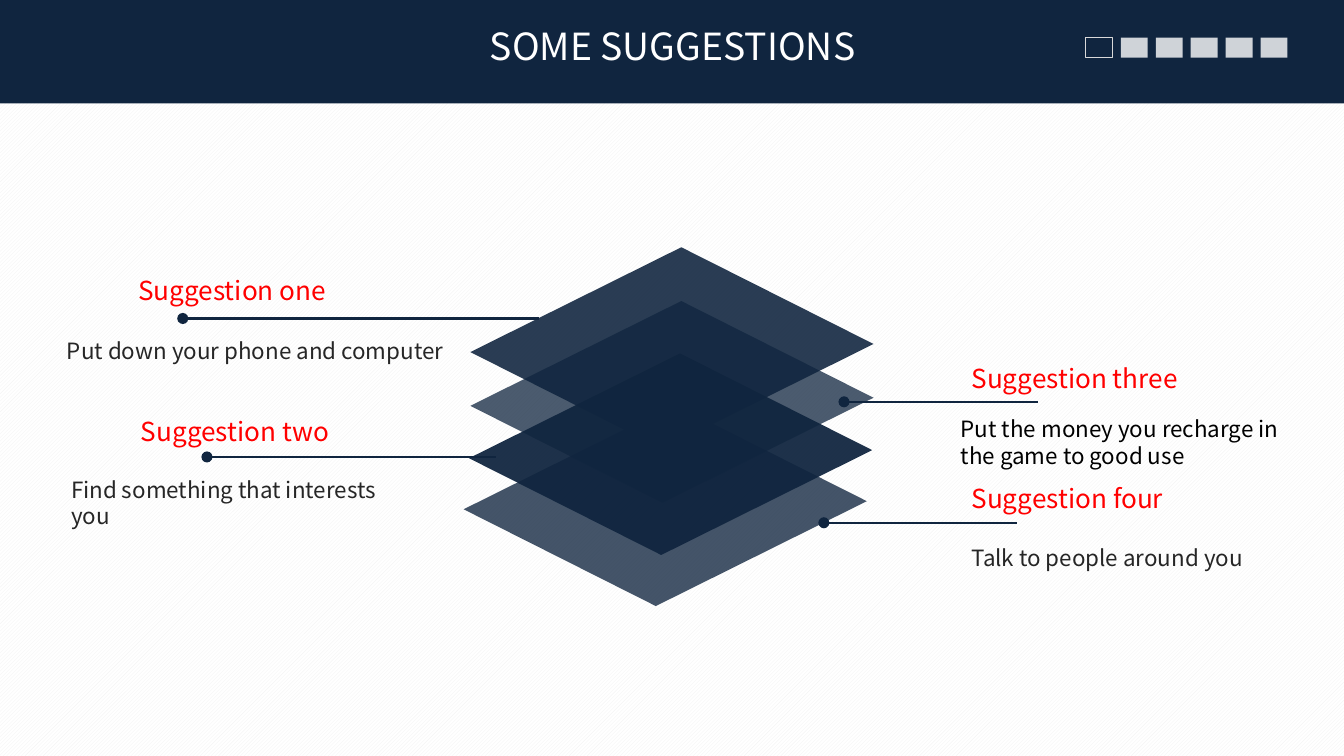
from lxml import etree
from pptx import Presentation
from pptx.dml.color import RGBColor
from pptx.enum.dml import MSO_PATTERN as Pattern
from pptx.enum.shapes import MSO_CONNECTOR as Link, MSO_SHAPE as Shape
from pptx.enum.text import PP_ALIGN as Align
from pptx.oxml.ns import qn
from pptx.util import Inches, Pt

FONT = "Noto Sans CJK SC"
NAVY, WHITE, RED, DARK = "10253F", "FFFFFF", "FF0000", "262626"


def color(text):
    return RGBColor.from_string(text)


class Deck:
    def __init__(self, width, height):
        self.prs = Presentation()
        self.prs.slide_width = Inches(width)
        self.prs.slide_height = Inches(height)
        self.slide = self.prs.slides.add_slide(self.prs.slide_layouts[6])
        self.shapes = self.slide.shapes

    def back(self, fore, ground):
        fill = self.slide.background.fill
        fill.patterned()
        fill.pattern = Pattern.LIGHT_UPWARD_DIAGONAL
        fill.fore_color.rgb = color(fore)
        fill.back_color.rgb = color(ground)

    def paint(self, shape, fill, alpha):
        """Give a flat fill; alpha is the opacity in percent."""
        shape.shadow.inherit = False
        shape.line.fill.background()
        if fill is None:
            shape.fill.background()
            return
        shape.fill.solid()
        shape.fill.fore_color.rgb = color(fill)
        if alpha < 100:
            tone = shape.fill._xPr.find(".//" + qn("a:srgbClr"))
            etree.SubElement(tone, qn("a:alpha"), val=str(alpha * 1000))

    def rect(self, x, y, w, h, fill=None, alpha=100, line=None):
        box = self.shapes.add_shape(
            Shape.RECTANGLE, Inches(x), Inches(y), Inches(w), Inches(h))
        self.paint(box, fill, alpha)
        if line:
            box.line.color.rgb = color(line)
            box.line.width = Pt(0.5)

    def layer(self, x, y, alpha):
        """Draw one tilted sheet centred on x, y."""
        half = [(0.07, -0.75), (1.5, -0.03)]
        spots = half + [(-dx, -dy) for dx, dy in half]
        points = [(Inches(x + dx), Inches(y + dy)) for dx, dy in spots]
        sheet = self.shapes.build_freeform(*points[0])
        sheet.add_line_segments(points[1:], close=True)
        self.paint(sheet.convert_to_shape(), NAVY, alpha)

    def text(self, x, y, w, h, words, size, tint, align=Align.LEFT):
        frame = self.shapes.add_textbox(
            Inches(x), Inches(y), Inches(w), Inches(h)).text_frame
        frame.word_wrap = True
        frame.text = words
        para = frame.paragraphs[0]
        para.alignment = align
        font = para.runs[0].font
        font.size = Pt(size)
        font.color.rgb = color(tint)
        font.name = FONT
        etree.SubElement(font._element, qn("a:ea"), typeface=FONT)

    def pin(self, x, y, end):
        """Draw a level line with a dot at its start."""
        line = self.shapes.add_connector(
            Link.STRAIGHT, Inches(x), Inches(y), Inches(end), Inches(y))
        line.line.color.rgb = color(NAVY)
        line.line.width = Pt(1.25)
        etree.SubElement(line.line._get_or_add_ln(), qn("a:headEnd"), type="oval")
        etree.SubElement(line._element.spPr, qn("a:effectLst"))

    def save(self):
        self.prs.save("out.pptx")


def main():
    deck = Deck(10, 10 * 9 / 16)
    deck.back("F2F2F2", WHITE)

    deck.rect(0, 0, 10, 0.77, NAVY)
    deck.rect(8.08, 0.28, 0.2, 0.15, line="D9D9D9")
    for i in range(1, 6):
        deck.rect(8.08 + 0.26 * i, 0.28, 0.2, 0.15, WHITE, 80)
    deck.text(2.96, 0.12, 4.09, 0.5, "SOME SUGGESTIONS", 20, WHITE, Align.CENTER)

    for x, y, alpha in [(4.95, 3.76, 78), (4.99, 3.38, 94),
                        (5, 2.99, 75), (5, 2.59, 89)]:
        deck.layer(x, y, alpha)

    # Each item: head (x, y, w, words), pin (x, y, end), note (x, y, w, h, words, tint)
    items = [
        ((0.93, 1.99, 1.83, "Suggestion one"), (1.36, 2.37, 4.01),
         (0.4, 2.46, 3.14, 0.3, "Put down your phone and computer", DARK)),
        ((0.95, 3.04, 1.67, "Suggestion two"), (1.54, 3.4, 3.69),
         (0.43, 3.49, 2.71, 0.5, "Find something that interests you", DARK)),
        ((7.13, 2.65, 2.03, "Suggestion three"), (6.28, 2.99, 7.72),
         (7.05, 3.04, 2.73, 0.5,
          "Put the money you recharge in the game to good use", "000000")),
        ((7.13, 3.54, 1.88, "Suggestion four"), (6.13, 3.89, 7.57),
         (7.13, 4, 2.73, 0.3, "Talk to people around you", DARK)),
    ]
    for (x, y, w, head), pin, (left, top, wide, high, note, tint) in items:
        deck.pin(*pin)
        deck.text(x, y, w, 0.34, head, 14, RED)
        deck.text(left, top, wide, high, note, 12, tint)
    deck.save()


if __name__ == "__main__":
    main()
